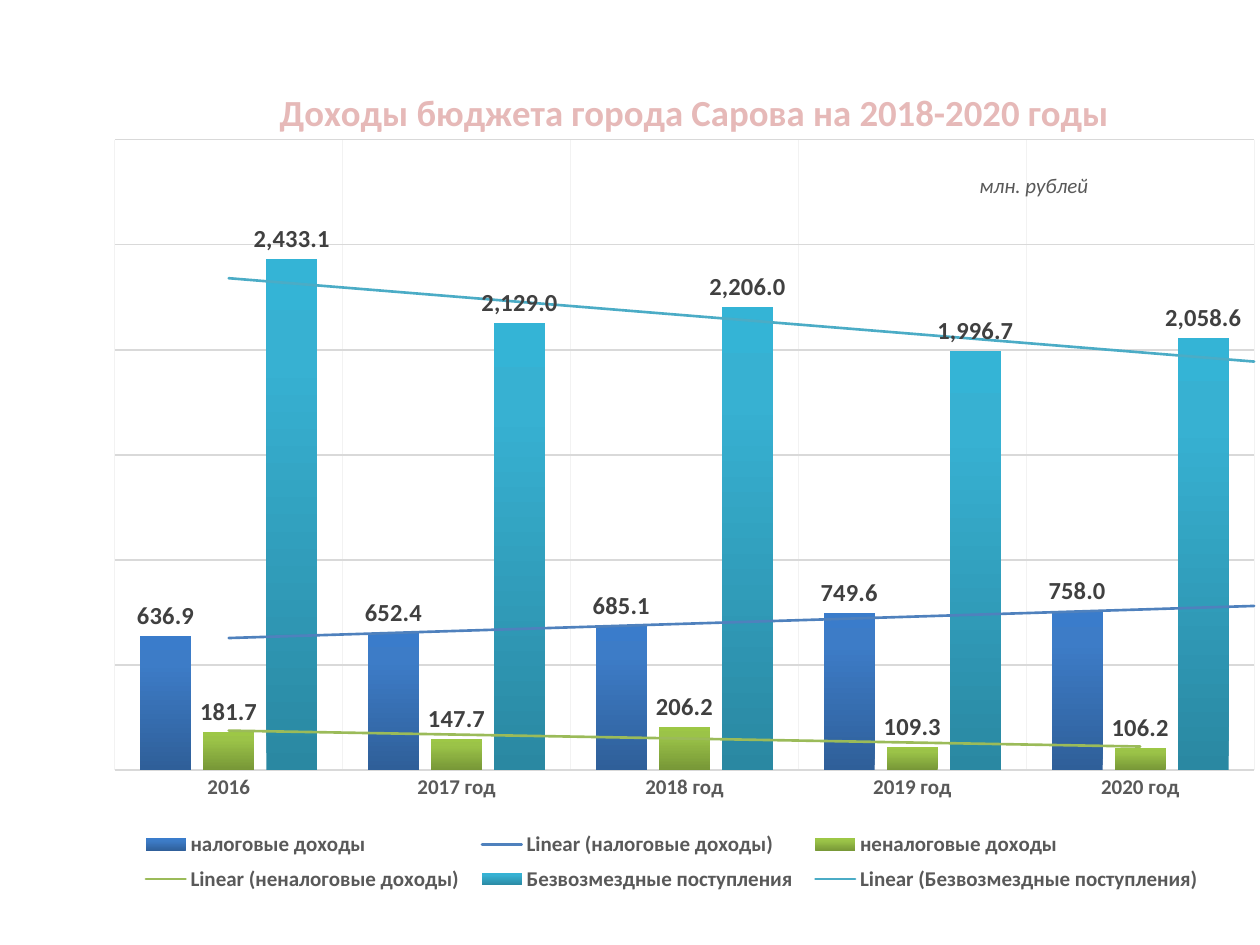
from dataclasses import dataclass
from typing import Optional

from lxml.etree import _Element
from pptx import Presentation
from pptx.chart.data import CategoryChartData
from pptx.dml.color import RGBColor
from pptx.enum.chart import (XL_CHART_TYPE, XL_LABEL_POSITION, XL_LEGEND_POSITION,
                             XL_TICK_LABEL_POSITION, XL_TICK_MARK)
from pptx.oxml import parse_xml
from pptx.oxml.ns import nsdecls, qn
from pptx.text.text import Font
from pptx.util import Pt

TYPEFACE = "Calibri"
GREY = "595959"
GRID = "D9D9D9"
NUMBER_FORMAT = "#,##0.0"
YEARS = ["2016", "2017 год", "2018 год", "2019 год", "2020 год"]


@dataclass
class Income:
    name: str
    values: list[float]
    gradient: tuple[str, str, str]  # from the foot of the column to its top
    trend_color: str
    forward: Optional[float] = None  # periods the trend runs past the last year


INCOMES = [
    Income("налоговые доходы", [636.9, 652.4, 685.1, 749.6, 758.0],
           ("2F5F99", "3D7CC7", "3A7CCB"), "4F81BD", 0.5),
    Income("неналоговые доходы", [181.7, 147.7, 206.2, 109.3, 106.2],
           ("779737", "9BC348", "9DC746"), "9BBB59"),
    Income("Безвозмездные поступления", [2433.1, 2129.0, 2206.0, 1996.7, 2058.6],
           ("2A88A2", "37B1D2", "34B4D6"), "4BACC6", 0.5),
]


def color(value: str) -> RGBColor:
    return RGBColor.from_string(value)


def style_font(font: Font, size: float, hex_color: str, bold: bool = False,
               italic: bool = False) -> None:
    font.name, font.size = TYPEFACE, Pt(size)
    font.bold, font.italic = bold, italic
    font.color.rgb = color(hex_color)


def style_line(line, hex_color: str, width: float) -> None:
    line.color.rgb = color(hex_color)
    line.width = Pt(width)


def place(element: _Element, index: int, x: float, y: float,
          size: Optional[tuple[float, float]] = None) -> None:
    """Set a chart part's place as fractions of the chart's size."""
    for old in element.findall(qn("c:layout")):
        element.remove(old)
    parts = '<c:layoutTarget val="inner"/>' if element.tag == qn("c:plotArea") else ""
    parts += '<c:xMode val="edge"/><c:yMode val="edge"/>'
    parts += f'<c:x val="{x}"/><c:y val="{y}"/>'
    if size:
        parts += f'<c:w val="{size[0]}"/><c:h val="{size[1]}"/>'
    element.insert(index, parse_xml(
        f'<c:layout {nsdecls("c")}><c:manualLayout>{parts}</c:manualLayout></c:layout>'))


def fill_gradient(series, stops: tuple[str, str, str]) -> None:
    marks = "".join(f'<a:gs pos="{position * 1000}"><a:srgbClr val="{stop}"/></a:gs>'
                    for position, stop in zip((0, 80, 100), stops))
    series._element.get_or_add_spPr().append(parse_xml(
        f'<a:gradFill {nsdecls("a")} rotWithShape="1"><a:gsLst>{marks}</a:gsLst>'
        '<a:lin ang="16200000" scaled="0"/></a:gradFill>'))


def add_trend(series, income: Income) -> None:
    forward = f'<c:forward val="{income.forward}"/>' if income.forward else ""
    trend = parse_xml(
        f'<c:trendline {nsdecls("c", "a")}><c:spPr><a:ln w="{Pt(1.5)}" cap="rnd">'
        f'<a:solidFill><a:srgbClr val="{income.trend_color}"/></a:solidFill></a:ln></c:spPr>'
        f'<c:trendlineType val="linear"/>{forward}'
        '<c:dispRSqr val="0"/><c:dispEq val="0"/></c:trendline>')
    series._element.find(qn("c:cat")).addprevious(trend)


def style_series(series, income: Income) -> None:
    series.invert_if_negative = False
    fill_gradient(series, income.gradient)
    labels = series.data_labels
    labels.show_value = True
    labels.number_format, labels.number_format_is_linked = NUMBER_FORMAT, False
    labels.position = XL_LABEL_POSITION.OUTSIDE_END
    style_font(labels.font, 14, "404040", bold=True)
    add_trend(series, income)


def style_axes(chart) -> None:
    years, amounts = chart.category_axis, chart.value_axis
    for axis in (years, amounts):
        axis.major_tick_mark = axis.minor_tick_mark = XL_TICK_MARK.NONE
        axis.has_major_gridlines = True
        style_font(axis.tick_labels.font, 12, GREY, bold=axis is years)
    style_line(years.format.line, GRID, 1)
    style_line(years.major_gridlines.format.line, "F2F2F2", 0.75)
    style_line(amounts.major_gridlines.format.line, GRID, 0.75)
    amounts.format.line.fill.background()
    amounts.minimum_scale, amounts.maximum_scale, amounts.major_unit = 0, 3000, 500
    amounts.tick_labels.number_format = NUMBER_FORMAT
    amounts.tick_labels.number_format_is_linked = False
    amounts.tick_label_position = XL_TICK_LABEL_POSITION.NONE

    # Unit of measure, set in the upper right of the plot
    unit = years.axis_title
    unit.text_frame.text = "млн. рублей"
    style_font(unit.text_frame.paragraphs[0].font, 12, GREY, italic=True)
    place(unit._element, 1, 0.74, 0.14)


def add_income_chart(page) -> None:
    data = CategoryChartData(number_format=NUMBER_FORMAT)
    data.categories = YEARS
    for income in INCOMES:
        data.add_series(income.name, income.values)
    chart = page.shapes.add_chart(XL_CHART_TYPE.COLUMN_CLUSTERED, Pt(54), Pt(26),
                                  Pt(680.4), Pt(499), data).chart
    style_font(chart.font, 10, "000000")

    # Title
    chart.has_title = True
    title = chart.chart_title
    title.text_frame.text = "Доходы бюджета города Сарова на 2018-2020 годы"
    style_font(title.text_frame.paragraphs[0].font, 21, "E6B9B8", bold=True)
    place(title._element, 1, 0.15, 0.04)

    # Columns with their trends
    plot = chart.plots[0]
    plot.gap_width, plot.overlap, plot.vary_by_categories = 100, -24, False
    for series, income in zip(plot.series, INCOMES):
        style_series(series, income)
    style_axes(chart)
    place(chart._chartSpace.chart.plotArea, 0, 0.017, 0.108, (0.957, 0.722))

    # Legend
    chart.has_legend = True
    legend = chart.legend
    legend.position = XL_LEGEND_POSITION.BOTTOM
    legend.include_in_layout = False
    style_font(legend.font, 12, GREY, bold=True)
    place(legend._element, 1, 0.03, 0.89, (0.91, 0.09))


def main() -> None:
    deck = Presentation()
    deck.slide_width, deck.slide_height = Pt(720), Pt(540)
    page = deck.slides.add_slide(deck.slide_layouts[6])
    add_income_chart(page)
    deck.save("out.pptx")


if __name__ == "__main__":
    main()
